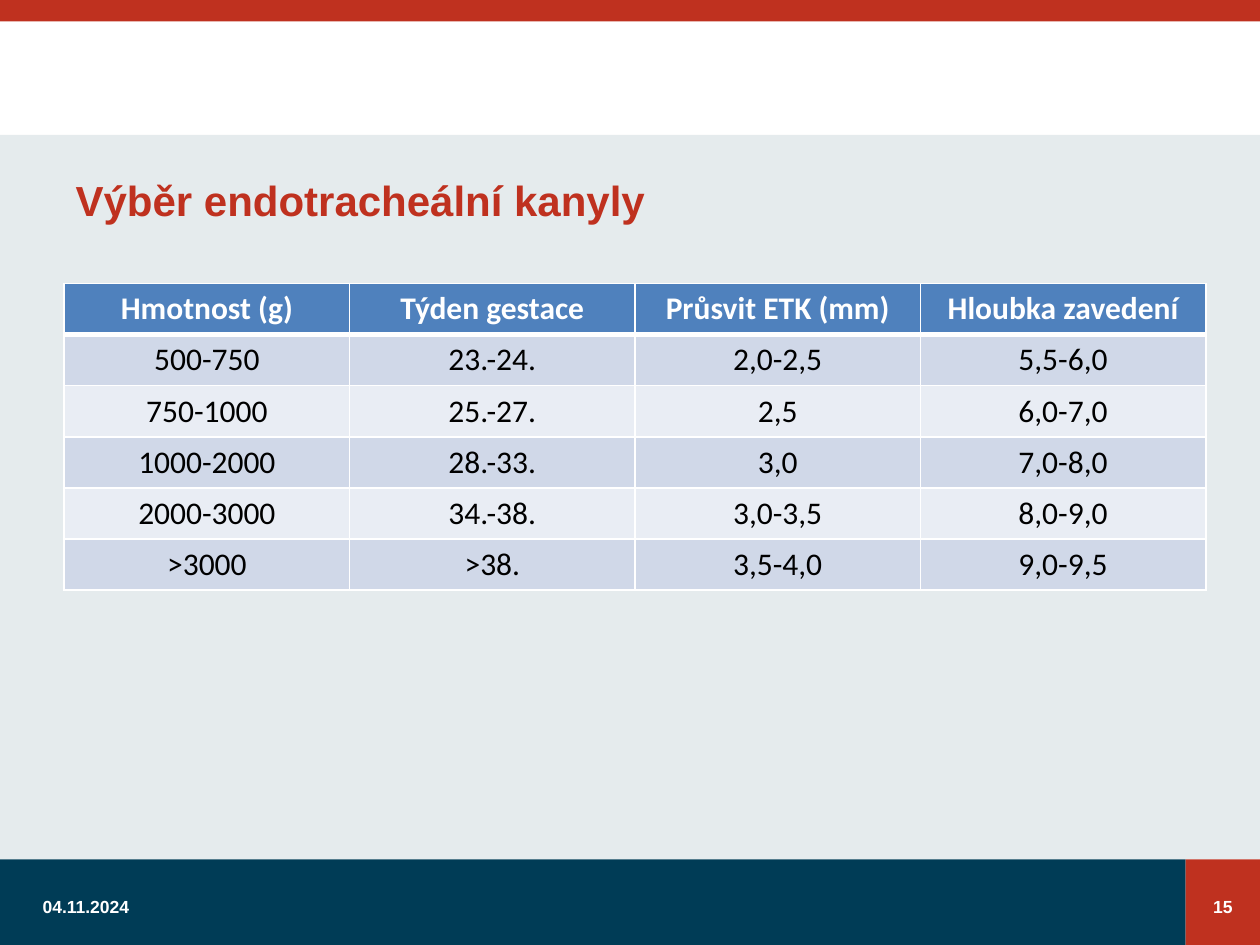
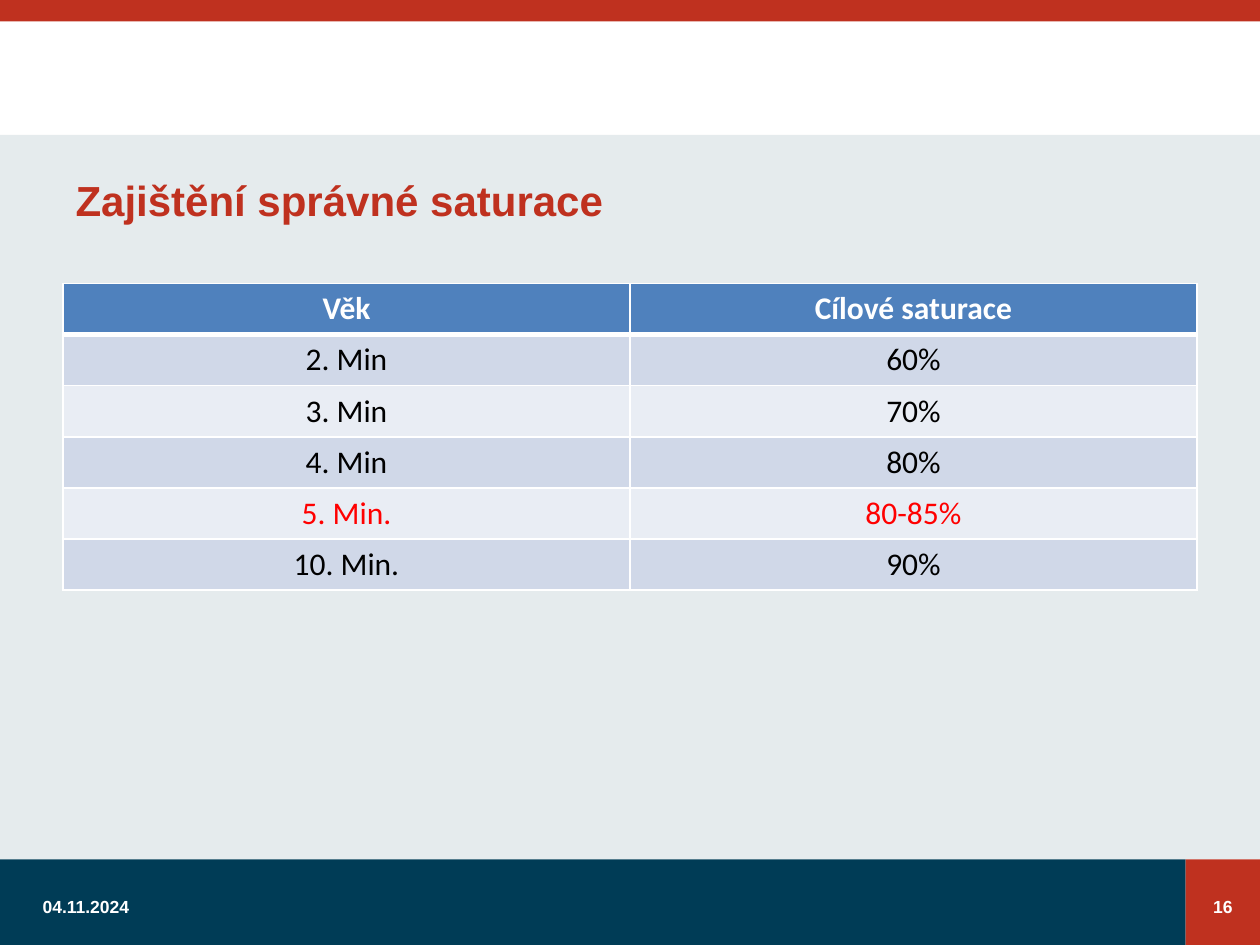
import dataclasses

import lxml.etree
import pptx
import pptx.dml.color
import pptx.enum.shapes
import pptx.enum.text
import pptx.oxml.ns
import pptx.util

Inches = pptx.util.Inches
Align = pptx.enum.text.PP_ALIGN
Anchor = pptx.enum.text.MSO_ANCHOR


@dataclasses.dataclass(frozen=True)
class Theme:
    navy: str = "003C56"
    red: str = "BF311F"
    white: str = "FFFFFF"
    black: str = "000000"
    highlight: str = "FF0000"
    table_header: str = "4F81BD"
    table_bands: tuple = ("D0D8E8", "E9EDF4")
    heading_font: str = "Arial"
    table_font: str = "Calibri"
    title_size: int = 24
    table_size: int = 18
    footer_size: int = 10
    panel_opacity: int = 10
    border_width: int = 1
    header_border_width: int = 3


def rgb(color):
    return pptx.dml.color.RGBColor.from_string(color)


def add_xml(parent, tag, **attributes):
    return lxml.etree.SubElement(parent, pptx.oxml.ns.qn(tag), attributes)


class Deck:
    def __init__(self, theme):
        self.theme = theme
        self.presentation = pptx.Presentation()
        self.presentation.slide_width = Inches(10)
        self.presentation.slide_height = Inches(7.5)
        self.slide = None

    def add_slide(self, title, number, date):
        layout = self.presentation.slide_layouts.get_by_name("Title Only")
        self.slide = self.presentation.slides.add_slide(layout)
        theme = self.theme
        self.add_band(0, 1.07, 10, 5.75, theme.navy, theme.panel_opacity)
        self.add_band(0, 6.82, 9.41, 0.68, theme.navy)
        self.add_band(0, 0, 10, 0.17, theme.red)
        self.add_band(9.41, 6.82, 0.59, 0.68, theme.red)
        self.add_footer(date, 0.24, 2.32, Align.LEFT)
        self.add_footer(str(number), 8.23, 1.65, Align.RIGHT)
        self.set_title(title)

    def add_band(self, left, top, width, height, color, opacity=100):
        band = self.slide.shapes.add_shape(
            pptx.enum.shapes.MSO_SHAPE.RECTANGLE,
            Inches(left), Inches(top), Inches(width), Inches(height))
        band.shadow.inherit = False
        band.fill.solid()
        band.fill.fore_color.rgb = rgb(color)
        band.line.fill.background()
        if opacity < 100:
            fill_color = band.element.spPr.find(".//" + pptx.oxml.ns.qn("a:srgbClr"))
            add_xml(fill_color, "a:alpha", val=str(opacity * 1000))

    def format_text(self, text_frame, font_name, size, color, bold, alignment):
        for paragraph in text_frame.paragraphs:
            paragraph.alignment = alignment
            for run in paragraph.runs:
                run.font.name = font_name
                run.font.size = pptx.util.Pt(size)
                run.font.bold = bold
                run.font.color.rgb = rgb(color)

    def add_footer(self, text, left, width, alignment):
        box = self.slide.shapes.add_textbox(
            Inches(left), Inches(7.06), Inches(width), Inches(0.27))
        box.text_frame.word_wrap = True
        box.text_frame.text = text
        self.format_text(box.text_frame, self.theme.heading_font,
                         self.theme.footer_size, self.theme.white, True, alignment)

    def set_title(self, text):
        title = self.slide.shapes.title
        title.element.getparent().append(title.element)
        title.left, title.top = Inches(0.5), Inches(1.31)
        title.width, title.height = Inches(9), Inches(0.55)
        title.text_frame.text = text
        title.text_frame.auto_size = pptx.enum.text.MSO_AUTO_SIZE.NONE
        title.text_frame.vertical_anchor = Anchor.MIDDLE
        self.format_text(title.text_frame, self.theme.heading_font,
                         self.theme.title_size, self.theme.red, True, Align.LEFT)

    def add_table(self, rows, left, width, highlighted_row=None):
        row_height = Inches(0.405)
        column_count = len(rows[0])
        table = self.slide.shapes.add_table(
            len(rows), column_count, Inches(left), Inches(2.25),
            Inches(width), row_height * len(rows)).table
        for column in table.columns:
            column.width = Inches(width / column_count)
        for row_index, values in enumerate(rows):
            table.rows[row_index].height = row_height
            for column_index, value in enumerate(values):
                cell = table.cell(row_index, column_index)
                cell.text = value
                self.format_cell(cell, row_index, row_index == highlighted_row)

    def format_cell(self, cell, row_index, highlighted):
        theme = self.theme
        is_header = row_index == 0
        self.add_borders(cell, row_index)
        cell.fill.solid()
        if is_header:
            fill, color = theme.table_header, theme.white
        else:
            fill = theme.table_bands[(row_index - 1) % 2]
            color = theme.highlight if highlighted else theme.black
        cell.fill.fore_color.rgb = rgb(fill)
        self.format_text(cell.text_frame, theme.table_font, theme.table_size,
                         color, is_header, Align.CENTER)

    def add_borders(self, cell, row_index):
        properties = cell._tc.get_or_add_tcPr()
        heavy_side = {0: "a:lnB", 1: "a:lnT"}.get(row_index)
        for side in ("a:lnL", "a:lnR", "a:lnT", "a:lnB"):
            width = (self.theme.header_border_width if side == heavy_side
                     else self.theme.border_width)
            line = add_xml(properties, side, w=str(pptx.util.Pt(width)))
            fill = add_xml(line, "a:solidFill")
            add_xml(fill, "a:srgbClr", val=self.theme.white)


def main():
    deck = Deck(Theme())
    date = "04.11.2024"

    deck.add_slide("Výběr endotracheální kanyly", 15, date)
    deck.add_table([
        ("Hmotnost (g)", "Týden gestace", "Průsvit ETK (mm)", "Hloubka zavedení"),
        ("500-750", "23.-24.", "2,0-2,5", "5,5-6,0"),
        ("750-1000", "25.-27.", "2,5", "6,0-7,0"),
        ("1000-2000", "28.-33.", "3,0", "7,0-8,0"),
        ("2000-3000", "34.-38.", "3,0-3,5", "8,0-9,0"),
        (">3000", ">38.", "3,5-4,0", "9,0-9,5"),
    ], left=0.51, width=9.06)

    deck.add_slide("Zajištění správné saturace", 16, date)
    deck.add_table([
        ("Věk", "Cílové saturace"),
        ("2. Min", "60%"),
        ("3. Min", "70%"),
        ("4. Min", "80%"),
        ("5. Min.", "80-85%"),
        ("10. Min.", "90%"),
    ], left=0.5, width=9, highlighted_row=4)

    deck.presentation.save("out.pptx")


if __name__ == "__main__":
    main()
